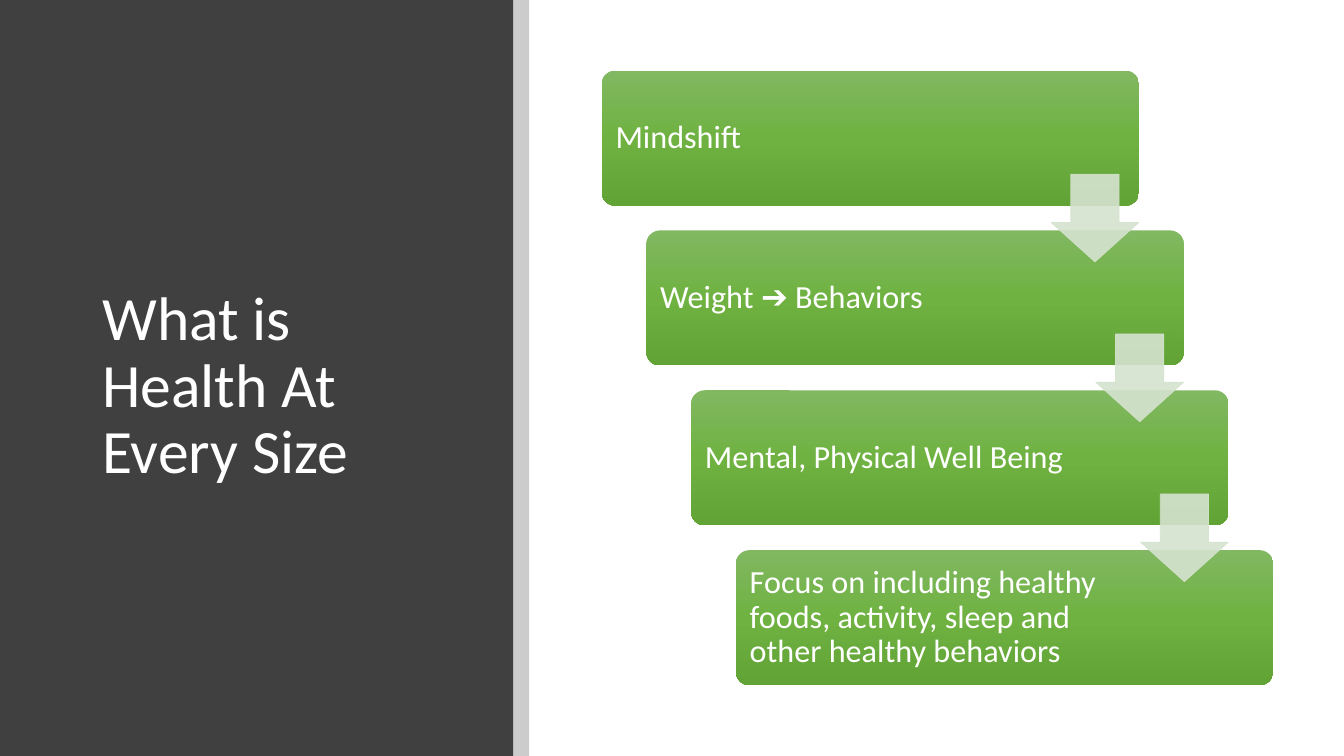
from copy import deepcopy

from lxml import etree
from pptx import Presentation
from pptx.dml.color import RGBColor
from pptx.enum.shapes import MSO_SHAPE
from pptx.enum.text import MSO_ANCHOR
from pptx.oxml.ns import qn
from pptx.util import Pt

RECTANGLE = MSO_SHAPE.RECTANGLE
ROUNDED = MSO_SHAPE.ROUNDED_RECTANGLE
DOWN_ARROW = MSO_SHAPE.DOWN_ARROW
MIDDLE = MSO_ANCHOR.MIDDLE

WHITE = RGBColor(0xFF, 0xFF, 0xFF)
BLACK = RGBColor(0x00, 0x00, 0x00)
CHARCOAL = RGBColor(0x40, 0x40, 0x40)
ARROW_GREEN = RGBColor(0xD5, 0xE3, 0xCF)
GREENS = [RGBColor(0x81, 0xB8, 0x61), RGBColor(0x6F, 0xB2, 0x42),
          RGBColor(0x62, 0xA3, 0x36)]

STEPS = [
    ("Mindshift", 271.5),
    ("Weight ➔ Behaviors", 283),
    ("Mental, Physical Well Being", 283),
    ("Focus on including healthy foods, activity, sleep and other healthy behaviors", 283),
]
STEP_LEFT, STEP_TOP = 429.8, 50.4
STEP_WIDTH, STEP_HEIGHT = 383.8, 96.5
SHIFT_X, SHIFT_Y = 31.95, 114.2
ARROW_LEFT, ARROW_TOP, ARROW_SIZE = 750.8, 124.4, 62.7


def add_block(kind, left, top, width, height, color=None, opacity=100):
    block = page.shapes.add_shape(kind, Pt(left), Pt(top), Pt(width), Pt(height))
    block.shadow.inherit = False
    block.line.fill.background()
    if color is not None:
        block.fill.solid()
        block.fill.fore_color.rgb = color
        for tint in block.fill._xPr.iter(qn("a:srgbClr")):
            etree.SubElement(tint, qn("a:alpha"), val=str(opacity * 1000))
    return block


def add_label(text, left, top, width, height, size, inset_x, inset_y):
    box = page.shapes.add_textbox(Pt(left), Pt(top), Pt(width), Pt(height))
    frame = box.text_frame
    frame.word_wrap = True
    frame.vertical_anchor = MIDDLE
    frame.margin_left = frame.margin_right = Pt(inset_x)
    frame.margin_top = frame.margin_bottom = Pt(inset_y)
    para = frame.paragraphs[0]
    para.line_spacing = 0.9
    span = para.add_run()
    span.text = text
    span.font.name = "Calibri"
    span.font.size = Pt(size)
    span.font.color.rgb = WHITE


deck = Presentation()
deck.slide_width, deck.slide_height = Pt(960), Pt(540)
page = deck.slides.add_slide(deck.slide_layouts[6])

# Left panel with its title
add_block(RECTANGLE, 0, 0, 366.5, 540, CHARCOAL)
add_block(RECTANGLE, 366.5, 0, 11.5, 540, BLACK, 20)
add_label("What is Health At Every Size", 66, 64, 263, 425.5, 44, 7.2, 3.6)

# Staircase of steps
for index, (text, text_width) in enumerate(STEPS):
    left = STEP_LEFT + index * SHIFT_X
    top = STEP_TOP + index * SHIFT_Y
    step = add_block(ROUNDED, left, top, STEP_WIDTH, STEP_HEIGHT)
    step.adjustments[0] = 0.1
    step.fill.gradient()
    step.fill.gradient_angle = 270
    stop_list = step.fill._fill._gradFill.gsLst
    stop_list.insert(1, deepcopy(stop_list[0]))
    for number, (stop, green) in enumerate(zip(step.fill.gradient_stops, GREENS)):
        stop.position = number / 2
        stop.color.rgb = green
    add_label(text, left + 2.8, top + 2.8, text_width, STEP_HEIGHT - 5.6, 23, 7.2, 7.2)

# Arrows between the steps
for index in range(len(STEPS) - 1):
    arrow = add_block(DOWN_ARROW, ARROW_LEFT + index * SHIFT_X,
                      ARROW_TOP + index * SHIFT_Y, ARROW_SIZE, ARROW_SIZE,
                      ARROW_GREEN, 90)
    arrow.adjustments[0] = 0.55
    arrow.adjustments[1] = 0.45
    arrow.line.width = Pt(0.5)
    arrow.line.color.rgb = ARROW_GREEN
    for tint in arrow.line._ln.iter(qn("a:srgbClr")):
        etree.SubElement(tint, qn("a:alpha"), val="90000")

deck.save("out.pptx")
